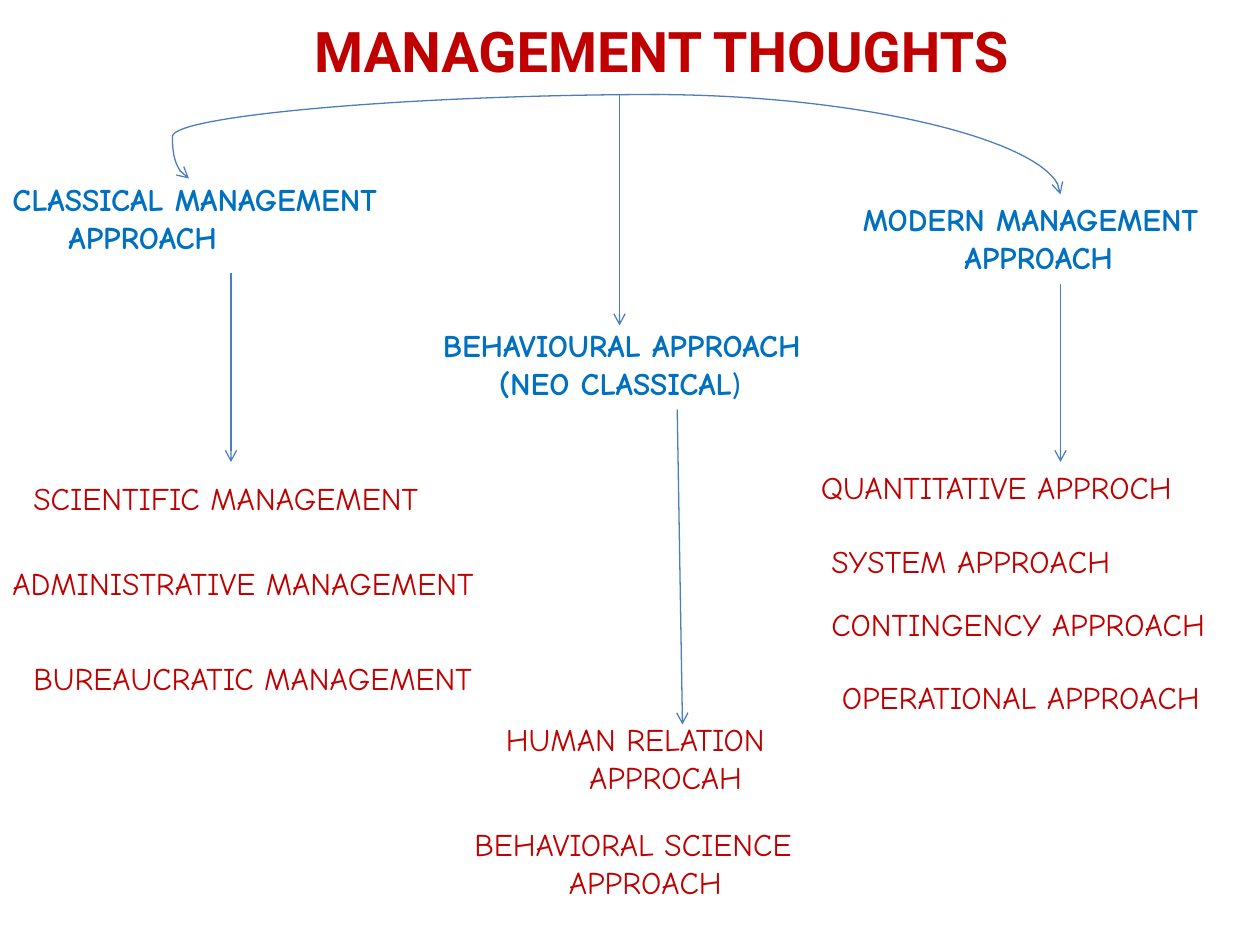
from lxml import etree
from pptx import Presentation
from pptx.dml.color import RGBColor
from pptx.enum.shapes import MSO_CONNECTOR as LINK
from pptx.enum.text import MSO_ANCHOR as ANCHOR, MSO_AUTO_SIZE as AUTO, PP_ALIGN as ALIGN
from pptx.oxml.ns import qn
from pptx.util import Pt

COLORS = {"red": "C00000", "blue": "0070C0", "line": "4B7EBC"}


def style(span, font, size, color, bold):
    span.font.name = font
    span.font.size = Pt(size)
    span.font.bold = bold
    span.font.color.rgb = RGBColor.from_string(COLORS[color])


def add_arrow(page, kind, start, end):
    arrow = page.shapes.add_connector(kind, *(Pt(v) for v in start + end))
    arrow.line.width = Pt(0.75)
    arrow.line.color.rgb = RGBColor.from_string(COLORS["line"])
    etree.SubElement(arrow.line._get_or_add_ln(), qn("a:tailEnd"), type="arrow")
    etree.SubElement(arrow._element.spPr, qn("a:effectLst"))
    return arrow._element.spPr.find(qn("a:prstGeom"))


deck = Presentation()
deck.slide_width, deck.slide_height = Pt(720), Pt(540)
page = deck.slides.add_slide(deck.slide_layouts[5])

title = page.shapes.title
title.left, title.top, title.width, title.height = Pt(102), Pt(6), Pt(552), Pt(46)
title.text_frame.text = "MANAGEMENT THOUGHTS"
title.text_frame.auto_size = AUTO.NONE
title.text_frame.vertical_anchor = ANCHOR.TOP
title.text_frame.paragraphs[0].alignment = ALIGN.CENTER
style(title.text_frame.paragraphs[0].runs[0], "Roboto", 32, "red", True)

approaches = [
    (0, 99.5, 264, ["CLASSICAL MANAGEMENT", "APPROACH"], 32),
    (246, 183, 282, ["BEHAVIOURAL APPROACH", "(NEO CLASSICAL"], 32),
    (486, 111, 240, ["MODERN MANAGEMENT", "APPROACH"], 58),
]
theories = [
    (12, 270, 282, ["SCIENTIFIC MANAGEMENT"], 0),
    (0, 319, 330, ["ADMINISTRATIVE MANAGEMENT"], 0),
    (12, 373, 318, ["BUREAUCRATIC MANAGEMENT"], 0),
    (282, 408, 192, ["HUMAN RELATION", "APPROCAH"], 47.5),
    (264, 468, 222, ["BEHAVIORAL SCIENCE", "APPROACH"], 54),
    (462, 264, 252, ["QUANTITATIVE APPROCH"], 0),
    (468, 306, 252, ["SYSTEM APPROACH"], 0),
    (468, 342, 252, ["CONTINGENCY APPROACH"], 0),
    (474, 384, 252, ["OPERATIONAL APPROACH"], 0),
]
for group, color, bold in [(approaches, "blue", True), (theories, "red", False)]:
    for left, top, width, lines, indent in group:
        height = 29 if len(lines) == 1 else 51
        box = page.shapes.add_textbox(Pt(left), Pt(top), Pt(width), Pt(height))
        box.text_frame.word_wrap = True
        box.text_frame.auto_size = AUTO.SHAPE_TO_FIT_TEXT
        box.text_frame.text = "\n".join(lines)
        for para in box.text_frame.paragraphs:
            style(para.runs[0], "Comic Neue", 18, color, bold)
        if indent:
            para._p.get_or_add_pPr().set("marL", str(Pt(indent)))
        if lines[-1] == "(NEO CLASSICAL":
            bracket = para.add_run()
            bracket.text = ")"
            style(bracket, "Calibri", 18, color, False)

to_classical = add_arrow(page, LINK.CURVE, (377, 54), (108, 102))
etree.SubElement(to_classical.find(qn("a:avLst")), qn("a:gd"), name="adj1", fmla="val 103500")
to_modern = add_arrow(page, LINK.CURVE, (372, 54), (606, 111))
to_modern.set("prst", "curvedConnector2")

for start, end in [
    ((354, 54), (354, 186)),
    ((132, 156), (132, 264)),
    ((387, 234), (390, 414)),
    ((606, 162), (606, 264)),
]:
    add_arrow(page, LINK.STRAIGHT, start, end)

deck.save("out.pptx")
